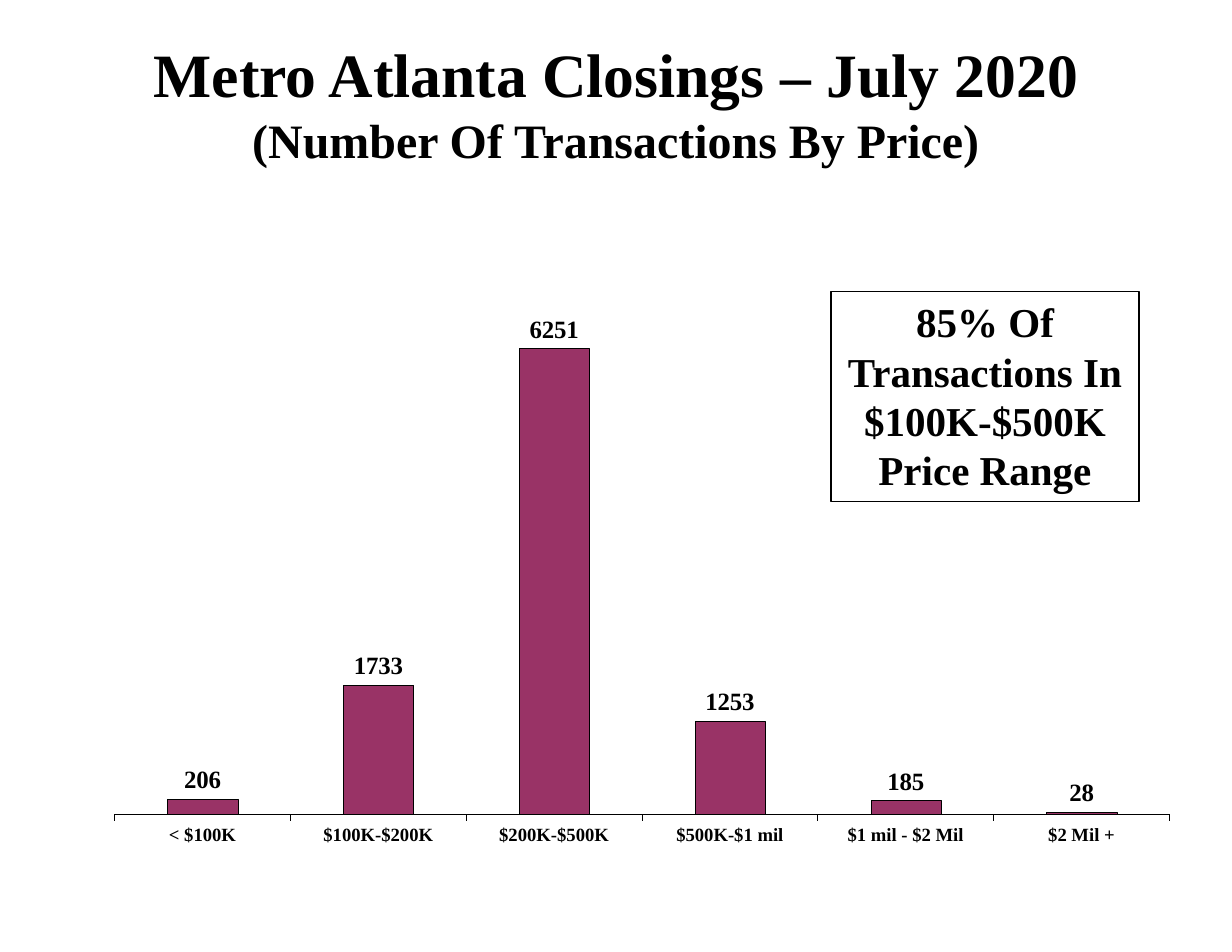
from lxml import etree
from pptx import Presentation
from pptx import util as u
from pptx.chart.data import CategoryChartData
from pptx.dml.color import RGBColor
from pptx.enum import chart as ch, shapes, text
from pptx.oxml import ns

TITLE = [("Metro Atlanta Closings – July 2020", 39.6),
         ("(Number Of Transactions By Price)", 30.8)]
CALLOUT = "85% Of Transactions In $100K-$500K Price Range"
CLOSINGS = {
    "< $100K": 206,
    "$100K-$200K": 1733,
    "$200K-$500K": 6251,
    "$500K-$1 mil": 1253,
    "$1 mil - $2 Mil": 185,
    "$2 Mil +": 28,
}
PLOT = {"x": 0.028, "y": 0.129, "w": 0.962, "h": 0.776}
FONT = "Times New Roman"
BLACK = RGBColor(0x00, 0x00, 0x00)
PLUM = RGBColor(0x99, 0x33, 0x66)


def style(font, size):
    font.name, font.size, font.bold = FONT, u.Pt(size), True
    font.color.rgb = BLACK


def outline(line, width):
    line.color.rgb = BLACK
    line.width = u.Pt(width)


def place(*inches):
    return [u.Inches(n) for n in inches]


def set_plot_area(chart):
    area = chart.plots[0]._element.getparent()
    for old in area.findall(ns.qn("c:layout")):
        area.remove(old)
    layout = etree.Element(ns.qn("c:layout"))
    manual = etree.SubElement(layout, ns.qn("c:manualLayout"))
    settings = [("layoutTarget", "inner"), ("xMode", "edge"), ("yMode", "edge")]
    for tag, val in settings + list(PLOT.items()):
        etree.SubElement(manual, ns.qn("c:" + tag)).set("val", str(val))
    area.insert(0, layout)


def add_title(s):
    sp = s.shapes.title
    sp.left, sp.top, sp.width, sp.height = place(0, 0.68, 11, 0.46)
    tf = sp.text_frame
    tf.word_wrap = True
    tf.auto_size = text.MSO_AUTO_SIZE.NONE
    tf.vertical_anchor = text.MSO_ANCHOR.MIDDLE
    p = tf.paragraphs[0]
    p.text = "\v".join(line for line, _ in TITLE)
    p.alignment = text.PP_ALIGN.CENTER
    for r, (_, size) in zip(p.runs, TITLE):
        style(r.font, size)


def add_closings_chart(s):
    data = CategoryChartData()
    data.categories = list(CLOSINGS)
    data.add_series("Series 1", list(CLOSINGS.values()))
    chart = s.shapes.add_chart(ch.XL_CHART_TYPE.COLUMN_CLUSTERED,
                               *place(0.75, 1.84, 9.79, 6), data).chart
    chart.has_legend = chart.has_title = False
    style(chart.font, 12)
    set_plot_area(chart)

    axis = chart.category_axis
    axis.major_tick_mark = ch.XL_TICK_MARK.OUTSIDE
    axis.tick_label_position = ch.XL_TICK_LABEL_POSITION.LOW
    style(axis.tick_labels.font, 12)
    outline(axis.format.line, 0.01)

    values = chart.value_axis
    values.minimum_scale, values.maximum_scale = 0, 7000
    values.has_major_gridlines = values.visible = False

    plot = chart.plots[0]
    plot.gap_width = 150
    plot.vary_by_categories = False
    bars = plot.series[0]
    bars.format.fill.solid()
    bars.format.fill.fore_color.rgb = PLUM
    outline(bars.format.line, 0.06)
    labels = bars.data_labels
    labels.show_value = True
    labels.position = ch.XL_LABEL_POSITION.OUTSIDE_END
    style(labels.font, 16)


def add_callout(s):
    sp = s.shapes.add_shape(shapes.MSO_SHAPE.RECTANGLE,
                            *place(7.42, 2.6, 2.75, 1.88))
    sp.shadow.inherit = False
    sp.fill.background()
    outline(sp.line, 0.75)
    tf = sp.text_frame
    tf.text = CALLOUT
    tf.word_wrap = True
    tf.auto_size = text.MSO_AUTO_SIZE.SHAPE_TO_FIT_TEXT
    tf.vertical_anchor = text.MSO_ANCHOR.TOP
    p = tf.paragraphs[0]
    p.alignment = text.PP_ALIGN.CENTER
    style(p.runs[0].font, 26.4)


def main():
    prs = Presentation()
    prs.slide_width, prs.slide_height = place(11, 8.5)
    s = prs.slides.add_slide(prs.slide_layouts[5])
    add_title(s)
    add_closings_chart(s)
    add_callout(s)
    prs.save("out.pptx")


if __name__ == "__main__":
    main()
